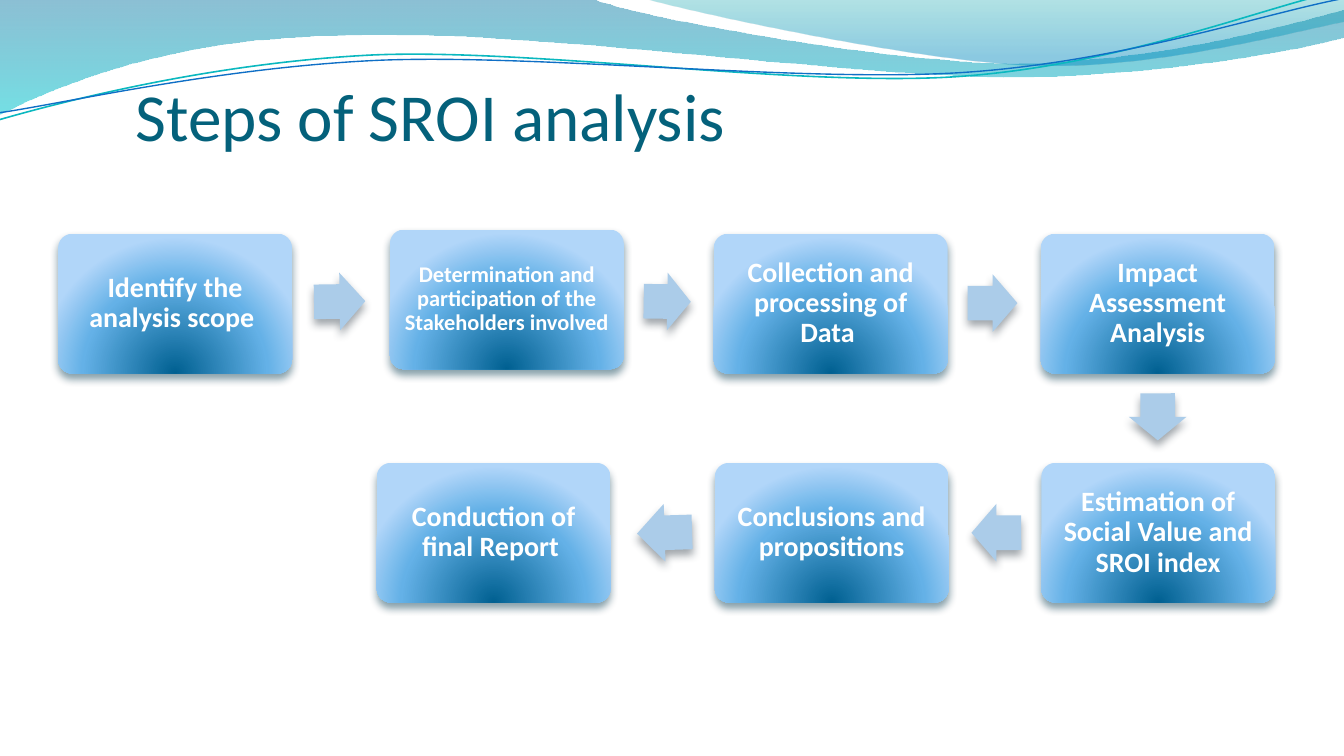
from dataclasses import dataclass

from lxml.etree import SubElement
from pptx import Presentation
from pptx.dml.color import RGBColor
from pptx.enum.shapes import MSO_SHAPE
from pptx.enum.text import MSO_ANCHOR, PP_ALIGN
from pptx.oxml.ns import qn
from pptx.util import Cm, Pt


@dataclass(frozen=True)
class Theme:
    font: str = "Calibri"
    title_color: str = "04617B"
    step_text: str = "FFFFFF"
    arrow: str = "ABCCE9"
    step_shadow: str = "00374C"
    arrow_shadow: str = "3C4852"
    title_size: float = 36
    step_size: float = 15
    small_size: float = 12
    # Gradient stops: position, colour, opacity (all in percent)
    step_stops: tuple = ((0, "006091", 100), (68, "64B1E7", 100), (100, "B1D6F9", 100))
    band_stops: tuple = ((0, "0074A1", 45), (100, "00C6CF", 55))
    crest_stops: tuple = ((0, "00A1A9", 30), (80, "008BBF", 45))
    teal_line: str = "0AB8BF"
    blue_line: str = "0F6FC6"


STEP_WIDTH, STEP_HEIGHT, ARROW_HEIGHT = 4.42, 2.64, 1.09
UPPER, LOWER = 4.42, 8.75

# Left, top, text
STEPS = [
    (1.1, UPPER, "Identify the analysis scope "),
    (7.37, UPPER - 0.08, "Determination and participation of the Stakeholders involved"),
    (13.49, UPPER, "Collection and processing of Data "),
    (19.67, UPPER, "Impact Assessment Analysis"),
    (19.68, LOWER, "Estimation of Social Value and SROI index"),
    (13.51, LOWER, "Conclusions and propositions"),
    (7.12, LOWER, "Conduction of final Report "),
]
# Centre x, centre y, length, rotation
ARROWS = [
    (6.42, 5.7, 0.97, 359.2),
    (12.61, 5.7, 0.89, 0.8),
    (18.76, 5.73, 0.94, 0),
    (21.88, 7.88, 0.89, 89.9),
    (18.83, 10.07, 0.94, 179.9),
    (12.56, 10.07, 1.04, 178.2),
]
# Each outline is a start point, then segments: one point is a line, three a Bézier curve
BAND = [
    (0, 0),
    [(11.18, -0.03)],
    [(12.09, 0.33), (16.87, 1.19), (19.25, 1.19)],
    [(21.67, 1.19), (24.33, 0.48), (25.4, 0.18)],
    [(25.43, 0.69)],
    [(24.97, 0.84), (22.1, 1.45), (18.95, 1.45)],
    [(15.8, 1.42), (9.7, 0.53), (6.53, 0.66)],
    [(3.28, 0.69), (1.17, 1.57), (-0.03, 2.16)],
    [(0, 0)],
]
CREST = [
    (12.17, -0.03),
    [(12.93, 0.2), (17.32, 1.17), (19.53, 1.24)],
    [(21.74, 1.32), (24.41, 0.61), (25.4, 0.41)],
    [(25.4, 0)],
    [(12.17, -0.03)],
]
TEAL_WAVE = [
    (0, 2.26),
    [(1.22, 1.91), (4.01, 1.19), (7.04, 1.04)],
    [(10.06, 0.91), (15.04, 1.65), (18.08, 1.45)],
    [(21.16, 1.24), (23.85, 0.15), (25.35, -0.18)],
]
BLUE_WAVE = [
    (0, 2.13),
    [(1.19, 1.96), (4.17, 1.27), (7.19, 1.14)],
    [(10.24, 1.02), (15.16, 1.57), (18.21, 1.37)],
    [(21.23, 1.17), (23.9, 0.25), (25.4, -0.03)],
]


def set_values(target, values):
    for name, value in values.items():
        setattr(target, name, value)


def add_element(parent, tag, **attributes):
    return SubElement(parent, qn(tag), {key: str(value) for key, value in attributes.items()})


def add_color(parent, color, opacity):
    element = add_element(parent, "a:srgbClr", val=color)
    if opacity < 100:
        add_element(element, "a:alpha", val=opacity * 1000)


def bend_segments(shape, segments):
    """Join the straight pieces of each three-point segment into one Bézier curve."""
    pieces = iter(list(shape._element.iter(qn("a:lnTo"))))
    for segment in segments:
        first, *others = [next(pieces) for _ in segment]
        if others:
            first.tag = qn("a:cubicBezTo")
        for piece in others:
            first.append(piece[0])
            piece.getparent().remove(piece)


class SlideBuilder:
    def __init__(self, slide, theme):
        self.slide = slide
        self.theme = theme

    def _gradient(self, shape, stops, radial=False):
        shape.fill.gradient()
        gradient = shape._element.spPr.find(qn("a:gradFill"))
        for child in list(gradient):
            gradient.remove(child)
        stop_list = add_element(gradient, "a:gsLst")
        for position, color, opacity in stops:
            add_color(add_element(stop_list, "a:gs", pos=position * 1000), color, opacity)
        if radial:
            circle = add_element(gradient, "a:path", path="circle")
            add_element(circle, "a:fillToRect", l=50000, t=130000, r=50000, b=-30000)
        else:
            add_element(gradient, "a:lin", ang=5400000, scaled=0)

    def _shadow(self, shape, color):
        shape.shadow.inherit = False
        effects = shape._element.spPr.find(qn("a:effectLst"))
        shadow = add_element(effects, "a:outerShdw", blurRad=Pt(4.5), dist=Pt(3),
                             dir=5400000, rotWithShape=0)
        add_color(shadow, color, 48)

    def _text(self, shape, text, size, color, inset, frame_format, paragraph_format, bold=False):
        frame = shape.text_frame
        margins = {f"margin_{side}": Cm(inset) for side in ("left", "top", "right", "bottom")}
        set_values(frame, {"word_wrap": True, **margins, **frame_format})
        paragraph = frame.paragraphs[0]
        set_values(paragraph, paragraph_format)
        run = paragraph.add_run()
        run.text = text
        set_values(run.font, {"name": self.theme.font, "size": Pt(size), "bold": bold})
        run.font.color.rgb = RGBColor.from_string(color)

    def _outline(self, outline, close):
        (left, top), *segments = outline
        builder = self.slide.shapes.build_freeform(Cm(left), Cm(top))
        points = [(Cm(x), Cm(y)) for segment in segments for x, y in segment]
        builder.add_line_segments(points, close=close)
        shape = builder.convert_to_shape()
        bend_segments(shape, segments)
        shape.shadow.inherit = False
        return shape

    def filled_wave(self, outline, stops):
        shape = self._outline(outline, close=True)
        self._gradient(shape, stops)
        shape.line.fill.background()

    def line_wave(self, outline, color, width):
        shape = self._outline(outline, close=False)
        shape.fill.background()
        shape.line.color.rgb = RGBColor.from_string(color)
        shape.line.width = Pt(width)

    def title(self, text):
        box = self.slide.shapes.add_textbox(Cm(2.31), Cm(1.15), Cm(20.45), Cm(2))
        self._text(box, text, self.theme.title_size, self.theme.title_color, 0.25,
                   {"vertical_anchor": MSO_ANCHOR.TOP}, {"alignment": PP_ALIGN.LEFT})

    def step(self, left, top, text):
        shape = self.slide.shapes.add_shape(MSO_SHAPE.ROUNDED_RECTANGLE, Cm(left), Cm(top),
                                            Cm(STEP_WIDTH), Cm(STEP_HEIGHT))
        shape.adjustments[0] = 0.1
        self._gradient(shape, self.theme.step_stops, radial=True)
        shape.line.fill.background()
        self._shadow(shape, self.theme.step_shadow)
        size = self.theme.small_size if len(text) > 50 else self.theme.step_size
        self._text(shape, text, size, self.theme.step_text, 0.15,
                   {"vertical_anchor": MSO_ANCHOR.MIDDLE},
                   {"alignment": PP_ALIGN.CENTER, "line_spacing": 0.9}, bold=True)

    def arrow(self, center_x, center_y, length, rotation):
        shape = self.slide.shapes.add_shape(
            MSO_SHAPE.RIGHT_ARROW, Cm(center_x - length / 2), Cm(center_y - ARROW_HEIGHT / 2),
            Cm(length), Cm(ARROW_HEIGHT))
        shape.adjustments[0] = 0.6
        shape.rotation = rotation
        shape.fill.solid()
        shape.fill.fore_color.rgb = RGBColor.from_string(self.theme.arrow)
        shape.line.fill.background()
        self._shadow(shape, self.theme.arrow_shadow)


def main():
    presentation = Presentation()
    set_values(presentation, {"slide_width": Cm(25.4), "slide_height": Cm(14.29)})
    theme = Theme()
    builder = SlideBuilder(presentation.slides.add_slide(presentation.slide_layouts[6]), theme)
    builder.filled_wave(BAND, theme.band_stops)
    builder.filled_wave(CREST, theme.crest_stops)
    builder.line_wave(TEAL_WAVE, theme.teal_line, 0.85)
    builder.line_wave(BLUE_WAVE, theme.blue_line, 0.75)
    builder.title("Steps of SROI analysis")
    for step in STEPS:
        builder.step(*step)
    for arrow in ARROWS:
        builder.arrow(*arrow)
    presentation.save("out.pptx")


if __name__ == "__main__":
    main()
